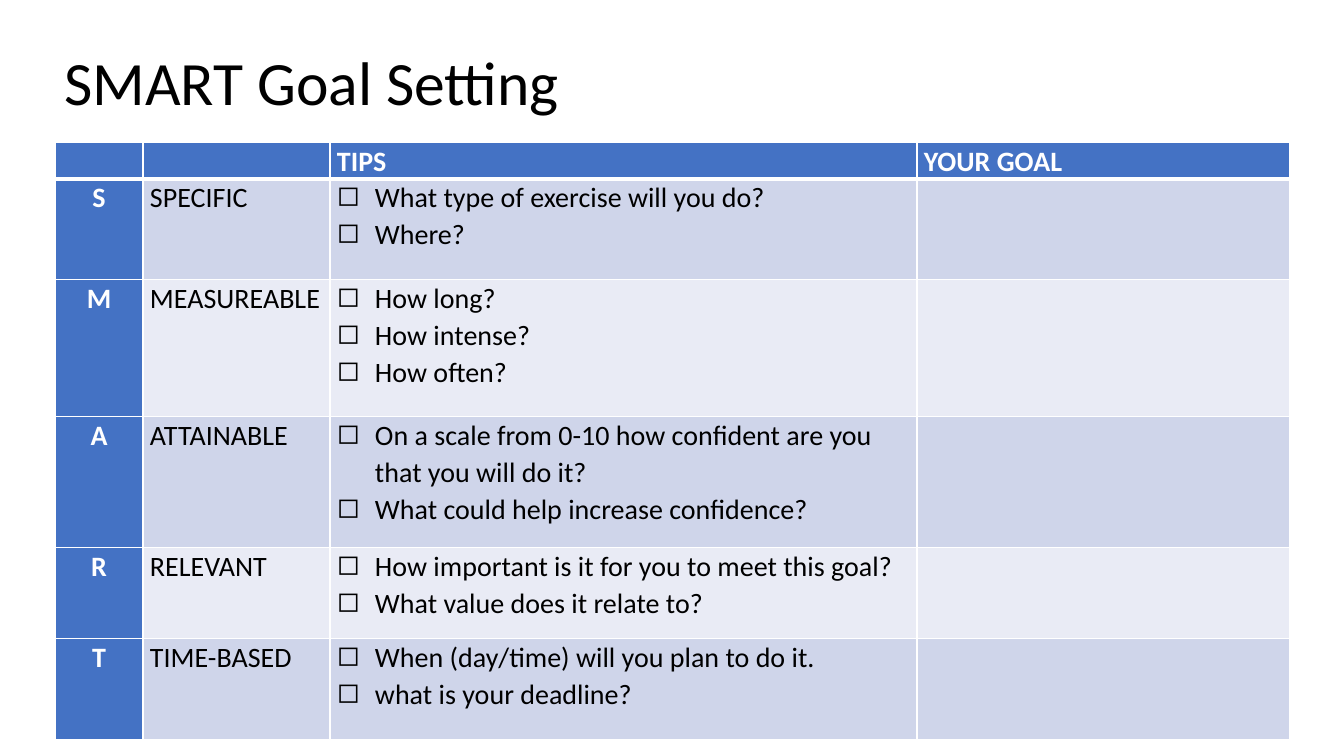
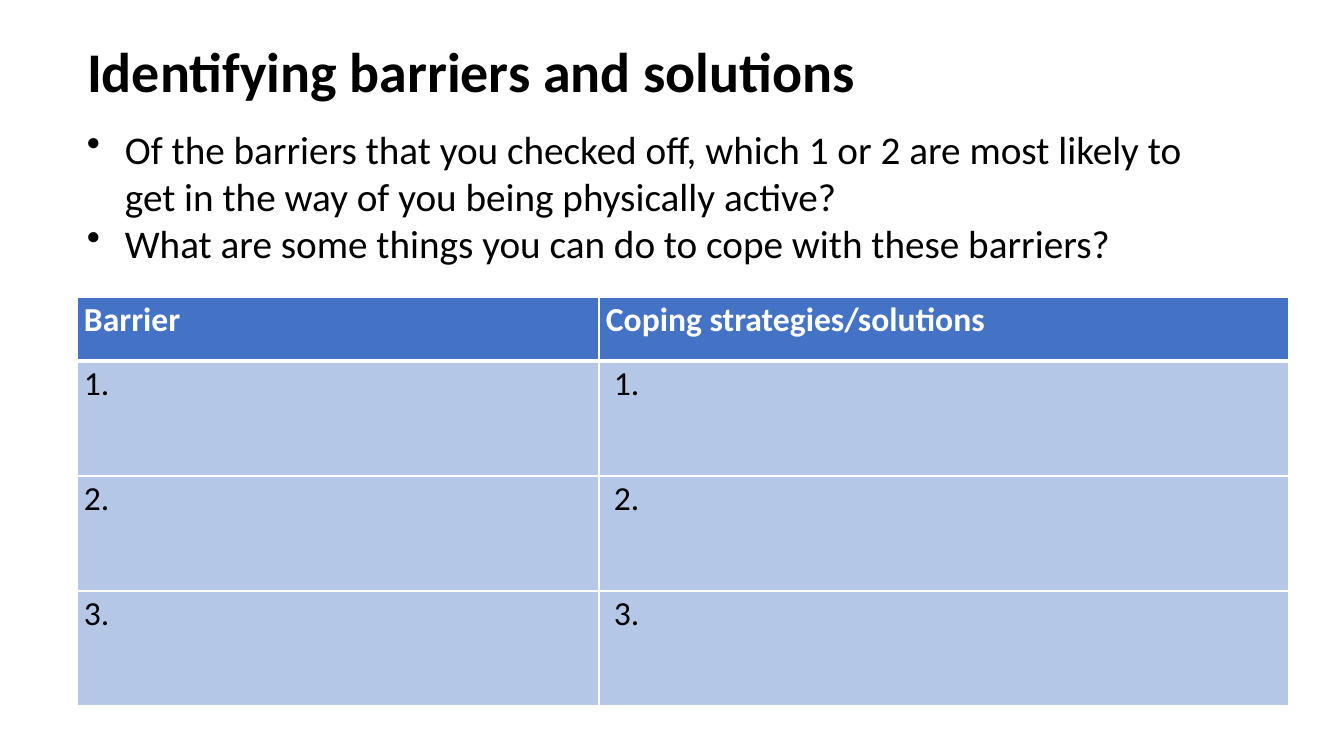
import dataclasses

import lxml.etree
import pptx
import pptx.dml.color
import pptx.enum.text
import pptx.oxml.ns
import pptx.util

ALIGN = pptx.enum.text.PP_ALIGN
ANCHOR = pptx.enum.text.MSO_ANCHOR
qn = pptx.oxml.ns.qn


@dataclasses.dataclass(frozen=True)
class Theme:
    font: str = "Calibri"
    ink: str = "000000"
    white: str = "FFFFFF"
    accent: str = "4472C4"
    bands: tuple = ("CFD5EA", "E9EBF5")
    plain: str = "B4C7E7"
    goal_title: int = 44
    barrier_title: int = 40
    bullets: int = 28
    barrier_cell: int = 24
    goal_cell: int = 20
    cell_spacing: float = 1.07
    rule: int = 1
    header_rule: int = 3


THEME = Theme()
SLIDE = (1344, 756)
HANG = 38
CELL_MARGIN = 7

GOAL_TITLE = "SMART Goal Setting"
GOAL_HEADER = ("", "", "TIPS", "YOUR GOAL")
GOALS = [
    ("SPECIFIC", ["What type of exercise will you do?", "Where?"]),
    ("MEASUREABLE", ["How long?", "How intense?", "How often?"]),
    ("ATTAINABLE", ["On a scale from 0-10 how confident are you that you will do it?",
                    "What could help increase confidence?"]),
    ("RELEVANT", ["How important is it for you to meet this goal?",
                  "What value does it relate to?"]),
    ("TIME-BASED", ["When (day/time) will you plan to do it.", "what is your deadline?"]),
]
GOAL_COLS = (88, 187, 587, 373)
GOAL_ROWS = (36, 101, 137, 131, 91, 101)

BARRIER_TITLE = "Identifying barriers and solutions"
BARRIER_QUESTIONS = [
    "Of the barriers that you checked off, which 1 or 2 are most likely to get in the way "
    "of you being physically active?",
    "What are some things you can do to cope with these barriers?",
]
BARRIER_HEADER = ("Barrier", "Coping strategies/solutions")
BARRIER_COUNT = 3
BARRIER_COLS = (522, 690)
BARRIER_ROWS = (64,) + (115,) * BARRIER_COUNT


def px(n):
    return pptx.util.Emu(round(n * 914400 / 100.8))


def rgb(color):
    return pptx.dml.color.RGBColor.from_string(color)


def write(tf, lines, size, color=THEME.ink, bold=False, align=ALIGN.LEFT,
          spacing=1.0, bullet=None, indent=0):
    """Write one paragraph per line; a bullet hangs in the indent."""
    for i, line in enumerate(lines):
        p = tf.paragraphs[0] if i == 0 else tf.add_paragraph()
        p.alignment, p.line_spacing = align, spacing
        pPr = p._p.get_or_add_pPr()
        pPr.set("marL", str(px(indent)))
        pPr.set("indent", str(-px(indent) if bullet else 0))
        if bullet:
            lxml.etree.SubElement(pPr, qn("a:buChar")).set("char", bullet)
        r = p.add_run()
        r.text = line
        r.font.name, r.font.size, r.font.bold = THEME.font, pptx.util.Pt(size), bold
        r.font.color.rgb = rgb(color)


def add_titled_slide(prs, title, box, size, bold=False):
    s = prs.slides.add_slide(prs.slide_layouts[5])
    sp = s.shapes.title
    sp.left, sp.top, sp.width, sp.height = map(px, box)
    tf = sp.text_frame
    tf.auto_size = pptx.enum.text.MSO_AUTO_SIZE.NONE
    tf.vertical_anchor = ANCHOR.MIDDLE
    write(tf, [title], size, bold=bold)
    return s


def add_borders(cell, **widths):
    """Draw white cell edges; widths in points are keyed L, R, T, B."""
    tcPr = cell._tc.get_or_add_tcPr()
    for side, width in widths.items():
        ln = lxml.etree.SubElement(tcPr, qn("a:ln" + side))
        ln.set("w", str(pptx.util.Pt(width)))
        fill = lxml.etree.SubElement(ln, qn("a:solidFill"))
        lxml.etree.SubElement(fill, qn("a:srgbClr")).set("val", THEME.white)


def add_table(s, left, top, cols, rows):
    frame = s.shapes.add_table(len(rows), len(cols), px(left), px(top),
                               px(sum(cols)), px(sum(rows)))
    table = frame.table
    table.first_row = table.horz_banding = False
    for col, width in zip(table.columns, cols):
        col.width = px(width)
    for row, height in zip(table.rows, rows):
        row.height = px(height)
    return table


def fill_cell(table, row, col, lines, fill, size, **fmt):
    cell = table.cell(row, col)
    cell.margin_left = cell.margin_right = px(CELL_MARGIN)
    cell.margin_top = cell.margin_bottom = 0
    add_borders(cell, L=THEME.rule, R=THEME.rule,
                T=THEME.header_rule if row == 1 else THEME.rule,
                B=THEME.header_rule if row == 0 else THEME.rule)
    cell.fill.solid()
    cell.fill.fore_color.rgb = rgb(fill)
    write(cell.text_frame, [line for line in lines if line], size,
          spacing=THEME.cell_spacing, **fmt)


def fill_header(table, labels, size):
    for col, label in enumerate(labels):
        fill_cell(table, 0, col, [label], THEME.accent, size, color=THEME.white, bold=True)


def build_goals(prs):
    s = add_titled_slide(prs, GOAL_TITLE, (54, 38, 523, 85), THEME.goal_title)
    table = add_table(s, 55, 142, GOAL_COLS, GOAL_ROWS)
    size = THEME.goal_cell
    fill_header(table, GOAL_HEADER, size)
    for row, (name, tips) in enumerate(GOALS, 1):
        band = THEME.bands[(row - 1) % 2]
        fill_cell(table, row, 0, [name[0]], THEME.accent, size,
                  color=THEME.white, bold=True, align=ALIGN.CENTER)
        fill_cell(table, row, 1, [name], band, size)
        fill_cell(table, row, 2, tips, band, size, bullet="◻", indent=HANG)
        fill_cell(table, row, 3, [], band, size)


def build_barriers(prs):
    s = add_titled_slide(prs, BARRIER_TITLE, (77, 31, 1146, 79), THEME.barrier_title, bold=True)
    tf = s.shapes.add_textbox(*map(px, (77, 120, 1146, 153))).text_frame
    tf.word_wrap = True
    write(tf, BARRIER_QUESTIONS, THEME.bullets, bullet="•", indent=HANG)

    table = add_table(s, 77, 297, BARRIER_COLS, BARRIER_ROWS)
    size = THEME.barrier_cell
    fill_header(table, BARRIER_HEADER, size)
    for row in range(1, BARRIER_COUNT + 1):
        for col, indent in enumerate((0, 8)):
            fill_cell(table, row, col, [f"{row}."], THEME.plain, size, indent=indent)


def main():
    prs = pptx.Presentation()
    prs.slide_width, prs.slide_height = map(px, SLIDE)
    build_goals(prs)
    build_barriers(prs)
    prs.save("out.pptx")


if __name__ == "__main__":
    main()
